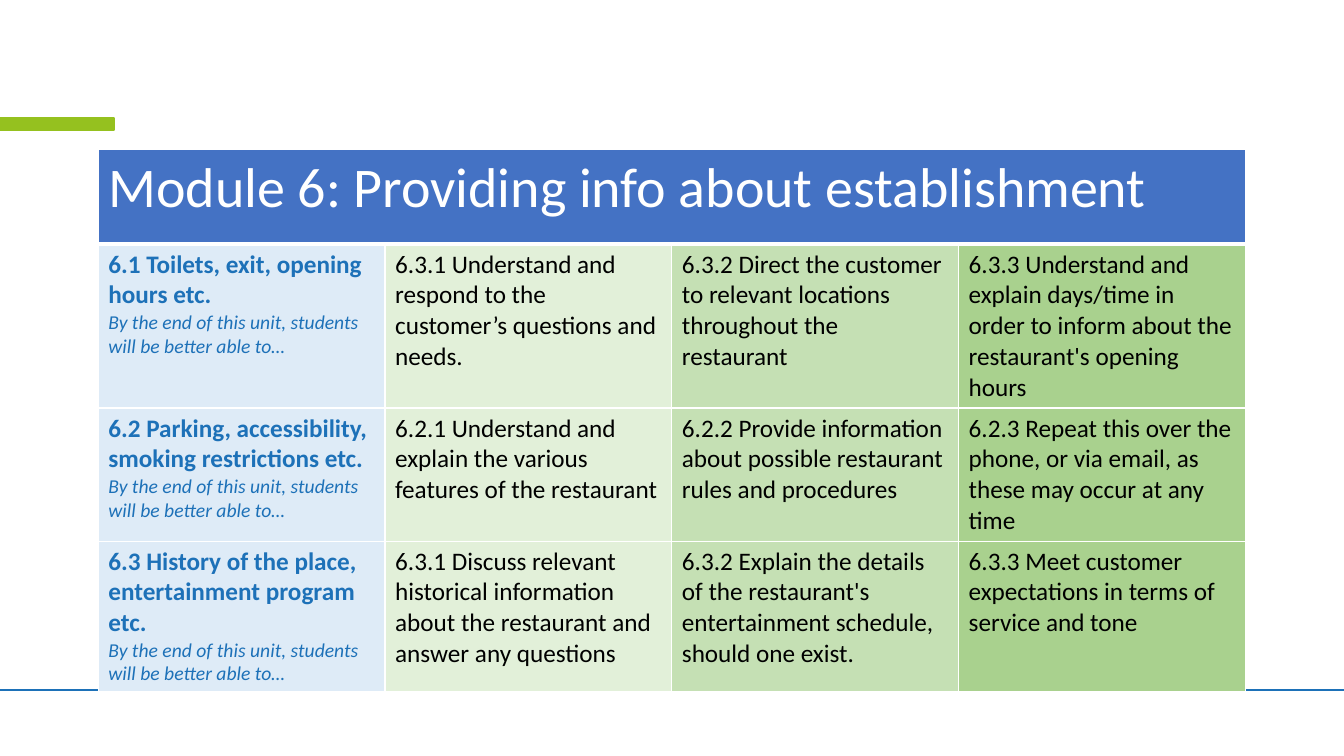
from lxml import etree
from pptx import Presentation
from pptx.dml.color import RGBColor
from pptx.enum.shapes import MSO_CONNECTOR, MSO_SHAPE
from pptx.oxml.ns import qn
from pptx.util import Pt

STRAIGHT = MSO_CONNECTOR.STRAIGHT
RECTANGLE = MSO_SHAPE.RECTANGLE

SLIDE_WIDTH, SLIDE_HEIGHT = 960, 540
FONT = "Calibri"
WHITE, BLACK, BLUE, GREEN = "FFFFFF", "000000", "1D71B8", "95C11F"
HEADER_FILL = "4472C4"
COLUMN_FILLS = ["DEEBF7", "E2F0D9", "C5E0B4", "A9D18E"]
COLUMN_WIDTH = 204.84
ROW_HEIGHTS = [67.7, 117, 95, 107]

TITLE = "Module 6: Providing info about establishment"
UNIT_LEAD = "By the end of this unit, students will be better able to…"
UNITS = [
    ("6.1 Toilets, exit, opening hours etc.",
     "6.3.1 Understand and respond to the customer’s questions and needs.",
     "6.3.2 Direct the customer to relevant locations throughout the restaurant",
     "6.3.3 Understand and explain days/time in order to inform about the restaurant's opening hours"),
    ("6.2 Parking, accessibility, smoking restrictions etc.",
     "6.2.1 Understand and explain the various features of the restaurant",
     "6.2.2 Provide information about possible restaurant rules and procedures",
     "6.2.3 Repeat this over the phone, or via email, as these may occur at any time"),
    ("6.3 History of the place, entertainment program etc.",
     "6.3.1 Discuss relevant historical information about the restaurant and answer any questions",
     "6.3.2 Explain the details of the restaurant's entertainment schedule, should one exist.",
     "6.3.3 Meet customer expectations in terms of service and tone"),
]


def color(value):
    return RGBColor.from_string(value)


def add_rule(slide, top):
    rule = slide.shapes.add_connector(STRAIGHT, 0, Pt(top), Pt(SLIDE_WIDTH), Pt(top))
    rule.line.color.rgb = color(BLUE)
    rule.line.width = Pt(1)
    etree.SubElement(rule._element.spPr, qn("a:effectLst"))


def add_accent_bar(slide, left, top, width, height):
    bar = slide.shapes.add_shape(RECTANGLE, Pt(left), Pt(top), Pt(width), Pt(height))
    bar.shadow.inherit = False
    bar.fill.solid()
    bar.fill.fore_color.rgb = color(GREEN)
    bar.line.color.rgb = color(GREEN)
    bar.line.width = Pt(1)


def add_run(paragraph, text, size, text_color, bold=False, italic=False):
    run = paragraph.add_run()
    run.text = text
    run.font.name = FONT
    run.font.size = Pt(size)
    run.font.bold = bold
    run.font.italic = italic
    run.font.color.rgb = color(text_color)


def style_cell(cell, fill, bottom_width=1):
    properties = cell._tc.get_or_add_tcPr()
    for side in "LRTB":
        width = bottom_width if side == "B" else 1
        border = etree.SubElement(properties, qn(f"a:ln{side}"), w=str(Pt(width)))
        border_fill = etree.SubElement(border, qn("a:solidFill"))
        etree.SubElement(border_fill, qn("a:srgbClr"), val=WHITE)
    cell.fill.solid()
    cell.fill.fore_color.rgb = color(fill)


def fill_header(table):
    header = table.cell(0, 0)
    header.merge(table.cell(0, len(COLUMN_FILLS) - 1))
    for cell in table.rows[0].cells:
        style_cell(cell, HEADER_FILL, bottom_width=3)
    add_run(header.text_frame.paragraphs[0], TITLE, 40, WHITE)


def fill_unit(row, texts):
    for cell, text, fill in zip(row.cells, texts, COLUMN_FILLS):
        style_cell(cell, fill)
        is_unit_name = text == texts[0]
        text_color = BLUE if is_unit_name else BLACK
        add_run(cell.text_frame.paragraphs[0], text, 18, text_color, bold=is_unit_name)
        if is_unit_name:
            add_run(cell.text_frame.add_paragraph(), UNIT_LEAD, 14, BLUE, italic=True)


def add_module_table(slide, left, top):
    columns = len(COLUMN_FILLS)
    frame = slide.shapes.add_table(len(ROW_HEIGHTS), columns, Pt(left), Pt(top),
                                   Pt(COLUMN_WIDTH * columns), Pt(sum(ROW_HEIGHTS)))
    table = frame.table
    for column in table.columns:
        column.width = Pt(COLUMN_WIDTH)
    for row, height in zip(table.rows, ROW_HEIGHTS):
        row.height = Pt(height)
    fill_header(table)
    for index, texts in enumerate(UNITS, start=1):
        fill_unit(table.rows[index], texts)


def main():
    presentation = Presentation()
    presentation.slide_width = Pt(SLIDE_WIDTH)
    presentation.slide_height = Pt(SLIDE_HEIGHT)
    slide = presentation.slides.add_slide(presentation.slide_layouts[6])
    add_rule(slide, 493)
    add_accent_bar(slide, 0, 84.2, 81.4, 8.8)
    add_module_table(slide, 70.2, 106.7)
    presentation.save("out.pptx")


if __name__ == "__main__":
    main()
